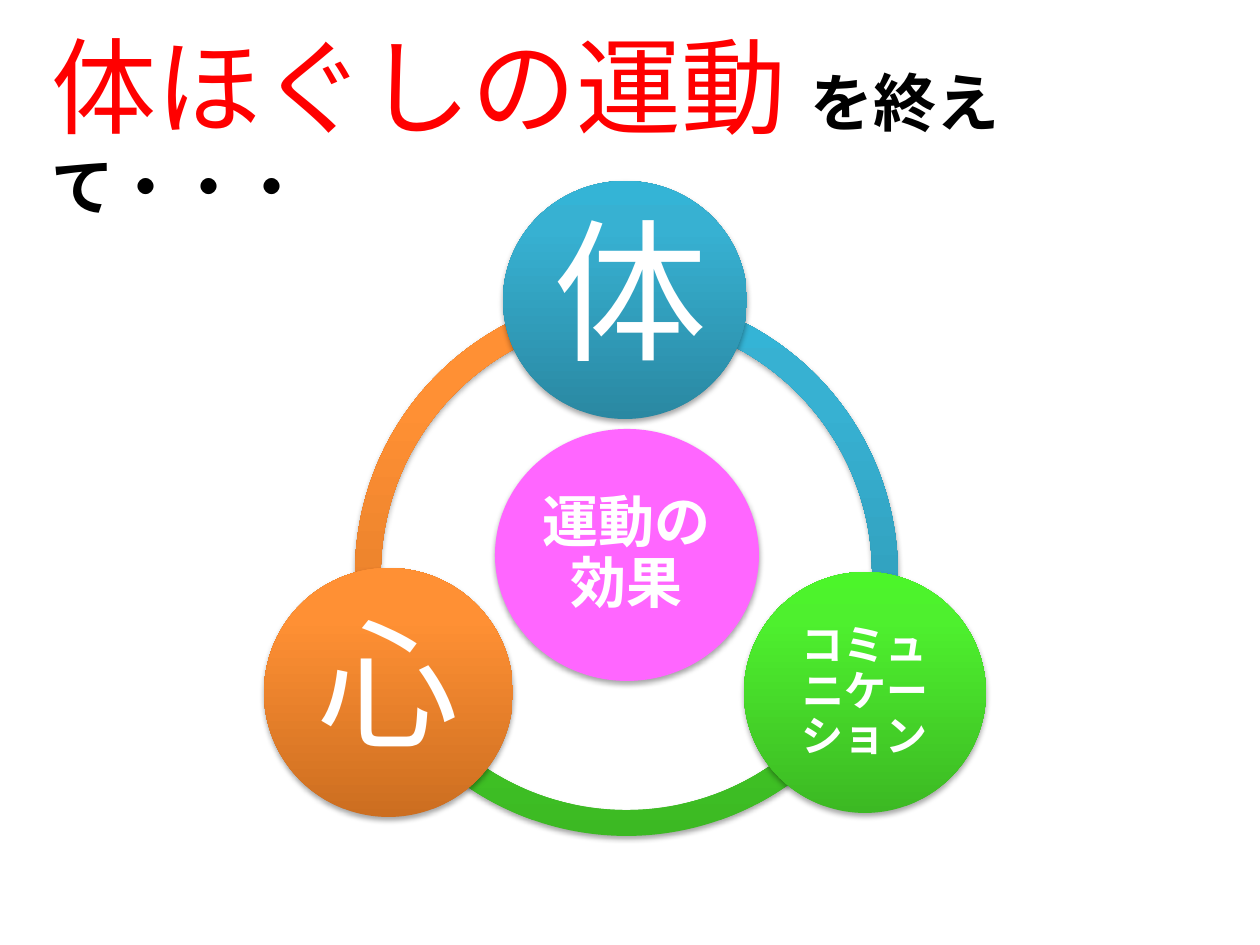
from copy import deepcopy
from lxml.etree import SubElement
from pptx import Presentation
from pptx.dml.color import RGBColor
from pptx.enum.lang import MSO_LANGUAGE_ID as Language
from pptx.enum.shapes import MSO_SHAPE as Preset
from pptx.enum.text import MSO_ANCHOR as Anchor, MSO_AUTO_SIZE as AutoSize, PP_ALIGN as Align
from pptx.oxml.ns import qn
from pptx.util import Pt

EMU_PER_PX = 914400 / 126
SLIDE_SIZE = (1260, 945)
THEME = {
    "plain": "Noto Sans CJK JP", "latin": "Calibri",
    "red": "FF0000", "black": "000000", "white": "FFFFFF",
    "center": ["FF66FF"],
    "body": ["2A88A2", "37B1D2", "34B4D6"],
    "social": ["3CB923", "4EF02E", "4CF52A"],
    "mind": ["CC6E20", "FF9034", "FF9136"],
    "stops": (0, 0.8, 1),
    "title_size": 60, "subtitle_size": 36,
    "center_size": 32, "body_size": 88, "social_size": 24, "mind_size": 80,
}
TITLE_BOX = (39, 15, 1137, 140)
TITLE_RUNS = [
    ("体ほぐしの運動 ", "plain", "title_size", "red", False),
    ("を終えて・・・", "latin", "subtitle_size", "black", True),
]
ARC_SIZE = 563
ARC_THICKNESS = 0.046
ARCS = [
    ("mind", (355, 292), (154.56, 267.49)),
    ("social", (345, 273), (30, 150)),
    ("body", (335, 292), (271.75, 25.41)),
]
CIRCLES = [
    ("center", "運動の効果", (495, 429, 264, 252), 5, "latin", True),
    ("body", "体", (503, 181, 244, 238), 15, "plain", False),
    ("social", "コミュニケーション", (744, 572, 242, 241), 4, "plain", True),
    ("mind", "心", (264, 568, 249, 249), 14, "plain", False),
]


def px(length):
    return round(length * EMU_PER_PX)


def set_all(target, values):
    for name, value in values.items():
        setattr(target, name, value)


def add_run(paragraph, text, font, size, color, bold):
    run = paragraph.add_run()
    run.text = text
    set_all(run.font, {"name": THEME[font], "size": Pt(THEME[size]), "bold": bold,
                       "language_id": Language.JAPANESE})
    run.font.color.rgb = RGBColor.from_string(THEME[color])
    if font == "plain":
        SubElement(run.font._element, qn("a:ea"), typeface=THEME[font])


def paint(shape, colors):
    fill = shape.fill
    if len(colors) == 1:
        fill.solid()
        fill.fore_color.rgb = RGBColor.from_string(colors[0])
        return
    fill.gradient()
    fill.gradient_angle = 90
    stop_list = shape._element.xpath(".//a:gsLst")[0]
    while len(stop_list) < len(colors):
        stop_list.append(deepcopy(stop_list[-1]))
    for stop, color, position in zip(fill.gradient_stops, colors, THEME["stops"]):
        stop.color.rgb = RGBColor.from_string(color)
        stop.position = position


def add_shadow(shape):
    shape.shadow.inherit = False
    effects = shape._element.spPr.find(qn("a:effectLst"))
    shadow = SubElement(effects, qn("a:outerShdw"), blurRad="40000", dist="23000",
                        dir="5400000", rotWithShape="0")
    color = SubElement(shadow, qn("a:srgbClr"), val=THEME["black"])
    SubElement(color, qn("a:alpha"), val="35000")


def add_part(slide, preset, box, topic):
    shape = slide.shapes.add_shape(preset, *map(px, box))
    shape.line.fill.background()
    paint(shape, THEME[topic])
    add_shadow(shape)
    return shape


def add_title(slide):
    title = slide.shapes.title
    set_all(title, dict(zip(("left", "top", "width", "height"), map(px, TITLE_BOX))))
    set_all(title.text_frame, {"word_wrap": True, "vertical_anchor": Anchor.TOP,
                               "auto_size": AutoSize.SHAPE_TO_FIT_TEXT})
    paragraph = title.text_frame.paragraphs[0]
    paragraph.alignment = Align.LEFT
    for run in TITLE_RUNS:
        add_run(paragraph, *run)


def add_cycle(slide):
    for topic, corner, angles in ARCS:
        arc = add_part(slide, Preset.BLOCK_ARC, (*corner, ARC_SIZE, ARC_SIZE), topic)
        for index, angle in enumerate(angles):
            arc.adjustments[index] = angle * 0.6
        arc.adjustments[2] = ARC_THICKNESS
    for topic, text, box, inset, font, bold in CIRCLES:
        circle = add_part(slide, Preset.OVAL, box, topic)
        frame = circle.text_frame
        set_all(frame, {"word_wrap": True, "vertical_anchor": Anchor.MIDDLE})
        set_all(frame, {f"margin_{side}": px(inset)
                        for side in ("left", "top", "right", "bottom")})
        paragraph = frame.paragraphs[0]
        set_all(paragraph, {"alignment": Align.CENTER, "line_spacing": 0.9})
        add_run(paragraph, text, font, f"{topic}_size", "white", bold)


def main():
    presentation = Presentation()
    set_all(presentation, dict(zip(("slide_width", "slide_height"), map(px, SLIDE_SIZE))))
    slide = presentation.slides.add_slide(presentation.slide_layouts[5])
    add_title(slide)
    add_cycle(slide)
    presentation.save("out.pptx")


if __name__ == "__main__":
    main()
